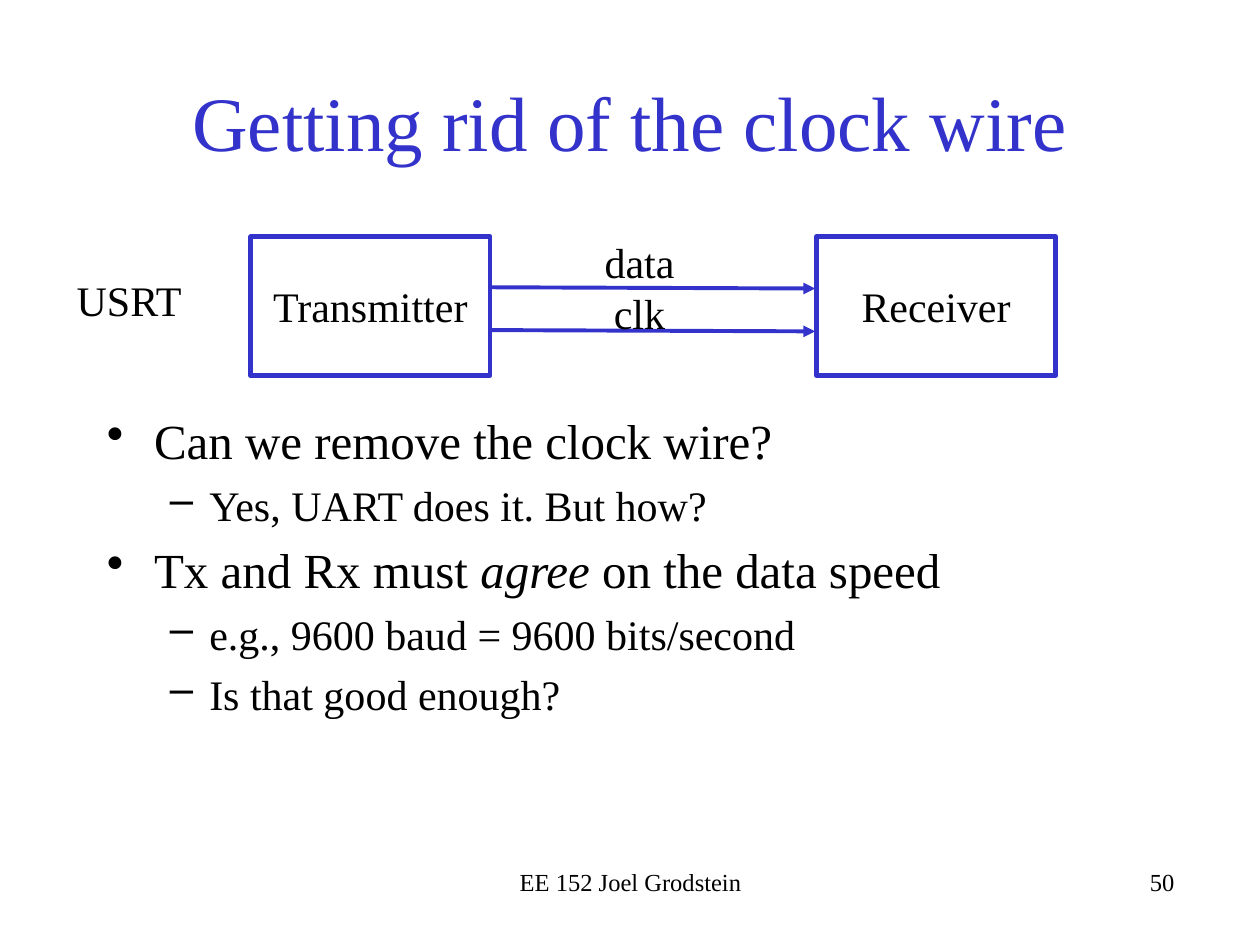
from lxml.etree import SubElement
from pptx import Presentation
from pptx.dml.color import RGBColor
from pptx.enum.shapes import MSO_CONNECTOR, MSO_SHAPE
from pptx.enum.text import MSO_ANCHOR, PP_ALIGN
from pptx.oxml.ns import qn
from pptx.util import Inches, Pt

COLORS = {"accent": "3333CC", "text": "000000"}
FONT = "Times New Roman"
CELL = 0.1  # grid cell in inches: 100 columns by 75 rows

# Bullet formats by outline level
LEVELS = [
    {"char": "•", "size": 28, "indent": 3.75, "hanging": 3.75},
    {"char": "–", "size": 24, "indent": 8.13, "hanging": 3.13},
]
OUTLINE = [
    (0, ["Can we remove the clock wire?"]),
    (1, ["Yes, UART does it. But how?"]),
    (0, ["Tx and Rx must ", "agree", " on the data speed"]),
    (1, ["e.g., 9600 baud = 9600 bits/second"]),
    (1, ["Is that good enough?"]),
]
EMPHASIS = {"agree"}


def grid(*cells):
    return [Inches(cell * CELL) for cell in cells]


def color(name):
    return RGBColor.from_string(COLORS[name])


def apply(target, formats):
    for name, value in formats.items():
        setattr(target, name, value)


def add_span(para, text, size, ink="text", italic=None):
    span = para.add_run()
    span.text = text
    apply(span.font, {"name": FONT, "size": Pt(size), "italic": italic})
    span.font.color.rgb = color(ink)


def add_label(page, text, place, size=24, align=PP_ALIGN.LEFT,
              anchor=MSO_ANCHOR.TOP, ink="text"):
    box = page.shapes.add_textbox(*grid(*place))
    apply(box.text_frame, {"word_wrap": True, "vertical_anchor": anchor})
    para = box.text_frame.paragraphs[0]
    para.alignment = align
    add_span(para, text, size, ink)


def add_block(page, text, place):
    block = page.shapes.add_shape(MSO_SHAPE.RECTANGLE, *grid(*place))
    block.shadow.inherit = False
    block.fill.background()
    block.line.color.rgb = color("accent")
    block.line.width = Pt(2.75)
    apply(block.text_frame, {"word_wrap": False,
                             "vertical_anchor": MSO_ANCHOR.MIDDLE})
    para = block.text_frame.paragraphs[0]
    para.alignment = PP_ALIGN.CENTER
    add_span(para, text, 24)


def add_wire(page, start, end):
    wire = page.shapes.add_connector(MSO_CONNECTOR.STRAIGHT, *grid(*start, *end))
    wire.line.color.rgb = color("accent")
    wire.line.width = Pt(2.25)
    SubElement(wire.line._get_or_add_ln(), qn("a:tailEnd"), type="triangle")
    SubElement(wire._element.spPr, qn("a:effectLst"))


def add_bullet(para, level):
    style = LEVELS[level]
    indent, hanging = grid(style["indent"], style["hanging"])
    apply(para, {"level": level, "space_before": Pt(5.6)})
    properties = para._p.get_or_add_pPr()
    properties.set("marL", str(indent))
    properties.set("indent", str(-hanging))
    SubElement(properties, qn("a:buChar"), char=style["char"])


def add_outline(page, items, place):
    box = page.shapes.add_textbox(*grid(*place))
    frame = box.text_frame
    frame.word_wrap = True
    for index, (level, texts) in enumerate(items):
        para = frame.add_paragraph() if index else frame.paragraphs[0]
        add_bullet(para, level)
        for text in texts:
            add_span(para, text, LEVELS[level]["size"], italic=text in EMPHASIS)


def main():
    deck = Presentation()
    deck.slide_width, deck.slide_height = grid(100, 75)
    page = deck.slides.add_slide(deck.slide_layouts[6])

    # Title and outline
    add_label(page, "Getting rid of the clock wire", (7.5, 3.3, 85, 12.5), 44,
              PP_ALIGN.CENTER, MSO_ANCHOR.MIDDLE, "accent")
    add_outline(page, OUTLINE, (7.5, 32.1, 85, 34.6))

    # Diagram: two blocks joined by the data and clock wires
    add_label(page, "USRT", (5.1, 21.3, 11.1, 5))
    for text, left in (("Transmitter", 19.9), ("Receiver", 64.8)):
        add_block(page, text, (left, 18.8, 19, 11))
    for row in (22.8, 26.2):
        add_wire(page, (38.9, row), (64.7, row + 0.1))
    add_label(page, "data clk", (44.7, 18.3, 12.1, 9.1), align=PP_ALIGN.CENTER)

    # Footer
    for text, left, align in (("EE 152 Joel Grodstein", 34.2, PP_ALIGN.CENTER),
                              ("50", 62.5, PP_ALIGN.RIGHT)):
        add_label(page, text, (left, 68.3, 31.7, 5), 14, align)

    deck.save("out.pptx")


if __name__ == "__main__":
    main()
